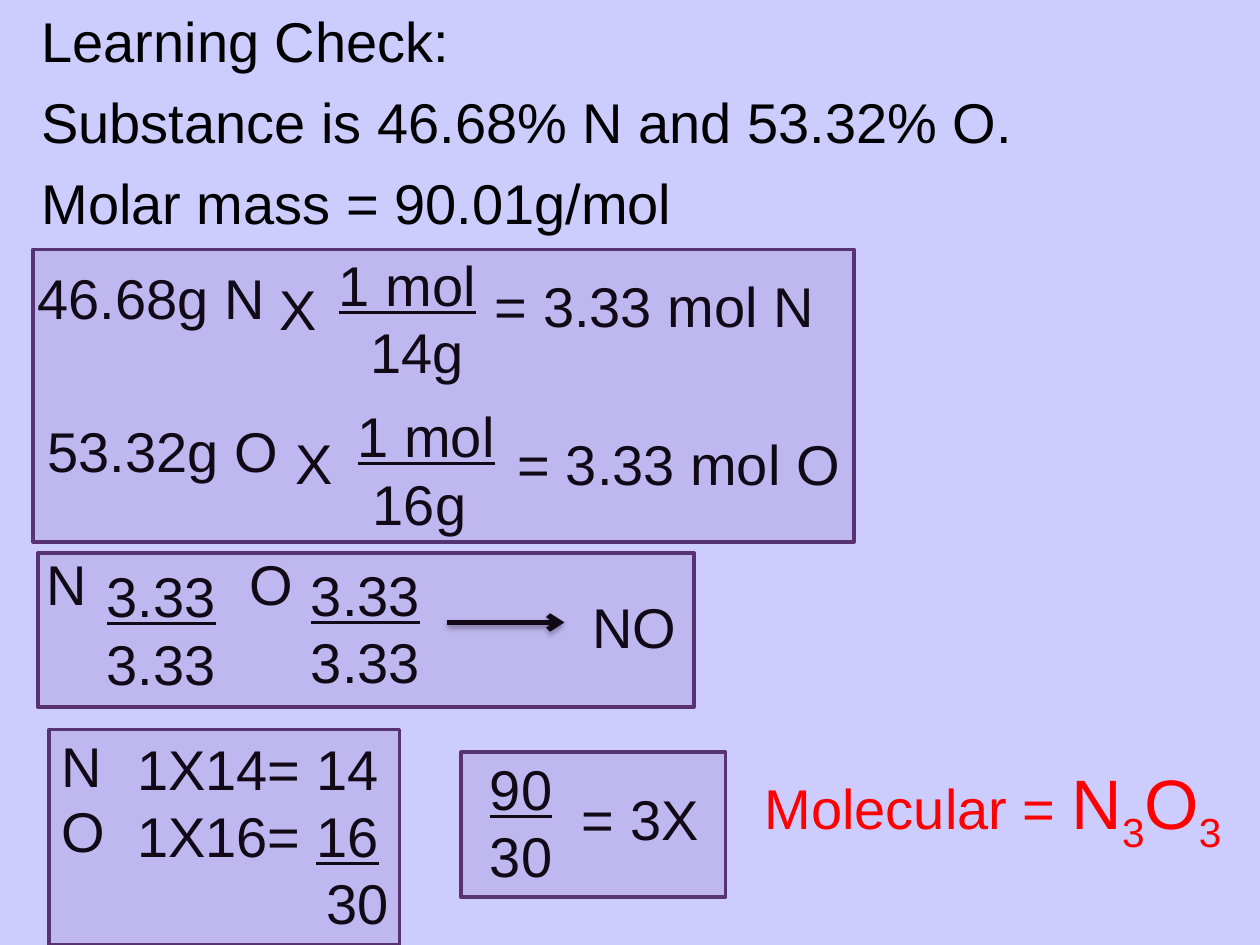
from lxml import etree
from pptx import Presentation
from pptx.dml.color import RGBColor
from pptx.enum.shapes import MSO_CONNECTOR as Connector, MSO_SHAPE as Shape
from pptx.oxml import parse_xml
from pptx.oxml.ns import nsdecls, qn
from pptx.util import Inches, Pt

BACKGROUND = RGBColor(0xCC, 0xCC, 0xFF)
BLACK = RGBColor(0x00, 0x00, 0x00)
RED = RGBColor(0xFF, 0x00, 0x00)
PANEL_FILL = RGBColor(0x76, 0x45, 0x99)
PANEL_LINE = RGBColor(0x57, 0x33, 0x71)

# The slide is a grid of 100 columns by 75 rows, each cell 0.1 inch square
CELL = Inches(0.1)
LINE_HEIGHT = 6.4
FRACTION_HEIGHT = 11.8

presentation = Presentation()
presentation.slide_width = 100 * CELL
presentation.slide_height = 75 * CELL
slide = presentation.slides.add_slide(presentation.slide_layouts[6])
slide.background.fill.solid()
slide.background.fill.fore_color.rgb = BACKGROUND


def grid(*cells):
    return [round(cell * CELL) for cell in cells]


def add_text(column, row, width, height, lines, color=BLACK, space=0):
    """Each line is (indent in columns, [(text, format values), ...])."""
    box = slide.shapes.add_textbox(*grid(column, row, width, height))
    frame = box.text_frame
    frame.word_wrap = False
    for index, (indent, runs) in enumerate(lines):
        paragraph = frame.add_paragraph() if index else frame.paragraphs[0]
        if indent:
            paragraph._p.get_or_add_pPr().set("marL", str(*grid(indent)))
        if index:
            paragraph.space_before = Pt(space)
        for text, values in runs:
            run = paragraph.add_run()
            run.text = text
            run.font.color.rgb = color
            for name, value in ({"name": "Arial", "size": Pt(32)} | values).items():
                if name == "baseline":
                    run._r.get_or_add_rPr().set(name, value)
                else:
                    setattr(run.font, name, value)


# Question
question = ["Learning Check:", "Substance is 46.68% N and 53.32% O.",
            "Molar mass = 90.01g/mol"]
add_text(2.3, 0, 95.5, 17.6, [(0, [(line, {})]) for line in question], space=8)

# Single-line terms: column, row, width, text
terms = [
    (2.8, 32.6, 20.4, "53.32g O"),
    (2, 20.4, 20.2, "46.68g N"),
    (21.2, 21.3, 5, "X"),
    (22.5, 33.5, 5, "X"),
    (40.1, 33.6, 27.8, "= 3.33 mol O"),
    (38.3, 21.1, 27.6, "= 3.33 mol N"),
    (2.7, 43.1, 5.3, "N"),
    (18.8, 43.1, 5.5, "O"),
    (3.9, 57.6, 5.3, "N"),
    (3.9, 62.7, 5.5, "O"),
    (45.2, 61.8, 11.4, "= 3X"),
    (46, 46.5, 11.9, "NO"),
]
for column, row, width, text in terms:
    add_text(column, row, width, LINE_HEIGHT, [(0, [(text, {})])])

# Fractions: column, row, width, numerator, denominator, denominator indent
fractions = [
    (25.9, 19.4, 13, "1 mol", "14g", 2.5),
    (27.4, 31.4, 13, "1 mol", "16g", 1.2),
    (7.5, 44.1, 10.7, "3.33", "3.33", 0),
    (23.7, 44, 10.7, "3.33", "3.33", 0),
    (37.9, 59.4, 7, "90", "30", 0),
]
for column, row, width, numerator, denominator, indent in fractions:
    add_text(column, row, width, FRACTION_HEIGHT,
             [(0, [(numerator, {"underline": True})]), (indent, [(denominator, {})])])

# Empirical mass sum
add_text(9.9, 57.8, 25.4, 17.2, [
    (0, [("1X14= 14", {})]),
    (0, [("1X16= ", {}), ("16", {"underline": True})]),
    (15, [("30", {})]),
])

# Molecular formula
large = {"size": Pt(40)}
subscript = large | {"baseline": "-25000"}
add_text(59.7, 59.8, 39, 8, [(0, [
    ("Molecular = ", {}), ("N", large), ("3", subscript), ("O", large), ("3", subscript),
])], RED)

# Arrow with a soft shadow
arrow = slide.shapes.add_connector(Connector.STRAIGHT, *grid(35.5, 49.4, 44.8, 49.4))
arrow.line.color.rgb = BLACK
arrow.line.width = Pt(3)
etree.SubElement(arrow.line._get_or_add_ln(), qn("a:tailEnd"), type="arrow")
arrow._element.spPr.append(parse_xml(
    f'<a:effectLst {nsdecls("a")}><a:outerShdw blurRad="{Pt(3.1)}" dist="{Pt(1.8)}" '
    'dir="5400000" rotWithShape="0"><a:srgbClr val="000000"><a:alpha val="35000"/>'
    '</a:srgbClr></a:outerShdw></a:effectLst>'))

# Translucent panels over the working
panels = [(2.6, 19.8, 65.2, 23.2), (36.6, 59.7, 21, 11.5),
          (3.9, 57.9, 27.8, 17.1), (3, 43.9, 52.1, 12.2)]
for bounds in panels:
    panel = slide.shapes.add_shape(Shape.RECTANGLE, *grid(*bounds))
    panel.shadow.inherit = False
    panel.fill.solid()
    panel.fill.fore_color.rgb = PANEL_FILL
    fill_color = panel._element.spPr.find(qn("a:solidFill"))[0]
    etree.SubElement(fill_color, qn("a:alpha"), val="15000")
    panel.line.color.rgb = PANEL_LINE
    panel.line.width = Pt(2)

presentation.save("out.pptx")
